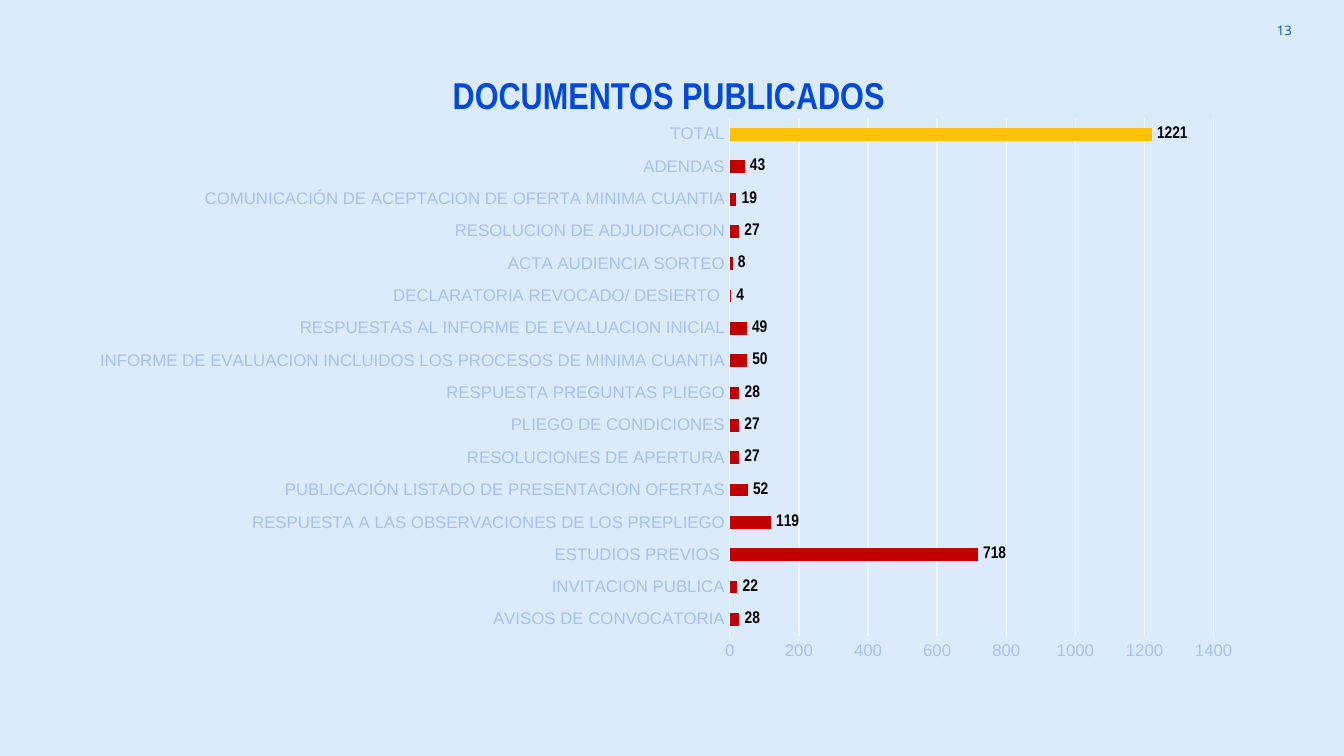
import pptx
import pptx.util
import pptx.chart.data
import pptx.dml.color
import pptx.enum.chart
import pptx.enum.text
import pptx.oxml
import pptx.oxml.ns

Inches, Pt = pptx.util.Inches, pptx.util.Pt
RGBColor = pptx.dml.color.RGBColor
XL, TXT = pptx.enum.chart, pptx.enum.text

BACKGROUND = RGBColor(0xDC, 0xEB, 0xFB)
NUMBER_BLUE = RGBColor(0x00, 0x54, 0xBC)
TITLE_BLUE = RGBColor(0x00, 0x49, 0xDB)
NAVY = RGBColor(0x07, 0x37, 0x63)
AXIS_BLUE = RGBColor(0xA4, 0xC2, 0xF4)
GRID = RGBColor(0xF1, 0xF6, 0xFD)
RED = RGBColor(0xC0, 0x00, 0x00)
GOLD = RGBColor(0xFF, 0xC0, 0x00)
BLACK = RGBColor(0x00, 0x00, 0x00)

DOCUMENTS = [
    ("AVISOS DE CONVOCATORIA", 28),
    ("INVITACION PUBLICA", 22),
    ("ESTUDIOS PREVIOS ", 718),
    ("RESPUESTA A LAS OBSERVACIONES DE LOS PREPLIEGO", 119),
    ("PUBLICACIÓN LISTADO DE PRESENTACION OFERTAS", 52),
    ("RESOLUCIONES DE APERTURA", 27),
    ("PLIEGO DE CONDICIONES", 27),
    ("RESPUESTA PREGUNTAS PLIEGO", 28),
    ("INFORME DE EVALUACION INCLUIDOS LOS PROCESOS DE MINIMA CUANTIA", 50),
    ("RESPUESTAS AL INFORME DE EVALUACION INICIAL", 49),
    ("DECLARATORIA REVOCADO/ DESIERTO ", 4),
    ("ACTA AUDIENCIA SORTEO", 8),
    ("RESOLUCION DE ADJUDICACION", 27),
    ("COMUNICACIÓN DE ACEPTACION DE OFERTA MINIMA CUANTIA", 19),
    ("ADENDAS", 43),
    ("TOTAL", 1221),
]

TEXTS = [
    dict(text="13", box=(9.11, 0.01, 0.6, 0.43), align=TXT.PP_ALIGN.RIGHT,
         frame=dict(word_wrap=True, vertical_anchor=TXT.MSO_ANCHOR.MIDDLE,
                    margin_top=Inches(0.1), margin_bottom=Inches(0.1)),
         font=dict(name="Open Sans", size=Pt(7)), color=NUMBER_BLUE),
    dict(text="DOCUMENTOS PUBLICADOS", box=(3.27, 0.49, 3.45, 0.44), align=TXT.PP_ALIGN.LEFT,
         frame=dict(word_wrap=False, auto_size=TXT.MSO_AUTO_SIZE.SHAPE_TO_FIT_TEXT),
         font=dict(name="Arial Narrow", size=Pt(20), bold=True), color=TITLE_BLUE),
]

CHART_BOX = (0.57, 0.8, 8.77, 4.2)
PLOT_BOX = (5.43, 0.88, 3.6, 3.85)
AXIS_FONT = dict(name="Arial", size=Pt(9))
LABEL_FONT = dict(name="Arial Narrow", size=Pt(9), bold=True)


def set_attrs(target, values):
    for name, value in values.items():
        setattr(target, name, value)


def style_font(font, values, color):
    set_attrs(font, values)
    font.color.rgb = color


def style_line(line):
    line.color.rgb = GRID
    line.width = Pt(0.75)


def add_text(s, item):
    sp = s.shapes.add_textbox(*map(Inches, item["box"]))
    tf = sp.text_frame
    set_attrs(tf, item["frame"])
    p = tf.paragraphs[0]
    p.alignment = item["align"]
    r = p.add_run()
    r.text = item["text"]
    style_font(r.font, item["font"], item["color"])


def place_plot(chart):
    area = chart._chartSpace.chart.plotArea
    for old in area.findall(pptx.oxml.ns.qn("c:layout")):
        area.remove(old)
    left, top, width, height = CHART_BOX
    x, y, w, h = PLOT_BOX
    shares = dict(x=(x - left) / width, y=(y - top) / height, w=w / width, h=h / height)
    parts = '<c:layoutTarget val="inner"/><c:xMode val="edge"/><c:yMode val="edge"/>'
    parts += "".join(f'<c:{key} val="{value:.4f}"/>' for key, value in shares.items())
    area.insert(0, pptx.oxml.parse_xml(
        f'<c:layout {pptx.oxml.ns.nsdecls("c")}><c:manualLayout>{parts}</c:manualLayout></c:layout>'))


def add_documents_chart(s):
    data = pptx.chart.data.CategoryChartData(number_format="0")
    names, values = zip(*DOCUMENTS)
    data.categories = names
    data.add_series("Series 1", values)
    chart = s.shapes.add_chart(XL.XL_CHART_TYPE.BAR_CLUSTERED, *map(Inches, CHART_BOX), data).chart
    set_attrs(chart, dict(has_legend=False, has_title=False))
    style_font(chart.font, dict(name="Arial", size=Pt(10)), NAVY)
    place_plot(chart)

    for axis in (chart.category_axis, chart.value_axis):
        set_attrs(axis, dict(major_tick_mark=XL.XL_TICK_MARK.NONE,
                             minor_tick_mark=XL.XL_TICK_MARK.NONE))
        style_font(axis.tick_labels.font, AXIS_FONT, AXIS_BLUE)
    style_line(chart.category_axis.format.line)
    axis = chart.value_axis
    set_attrs(axis, dict(minimum_scale=0, maximum_scale=1400, major_unit=200,
                         has_major_gridlines=True))
    axis.format.line.fill.background()
    style_line(axis.major_gridlines.format.line)
    set_attrs(axis.tick_labels, dict(number_format="0", number_format_is_linked=False))

    plot = chart.plots[0]
    set_attrs(plot, dict(gap_width=150, vary_by_categories=False))
    series = plot.series[0]
    series.invert_if_negative = False
    for part, color in ((series, RED), (series.points[len(DOCUMENTS) - 1], GOLD)):
        part.format.fill.solid()
        part.format.fill.fore_color.rgb = color
    labels = series.data_labels
    set_attrs(labels, dict(show_value=True, number_format="0", number_format_is_linked=False,
                           position=XL.XL_LABEL_POSITION.OUTSIDE_END))
    style_font(labels.font, LABEL_FONT, BLACK)


def main():
    prs = pptx.Presentation()
    set_attrs(prs, dict(slide_width=Inches(10), slide_height=Inches(10) * 9 // 16))
    s = prs.slides.add_slide(prs.slide_layouts[6])
    s.background.fill.solid()
    s.background.fill.fore_color.rgb = BACKGROUND
    for item in TEXTS:
        add_text(s, item)
    add_documents_chart(s)
    prs.save("out.pptx")


if __name__ == "__main__":
    main()
